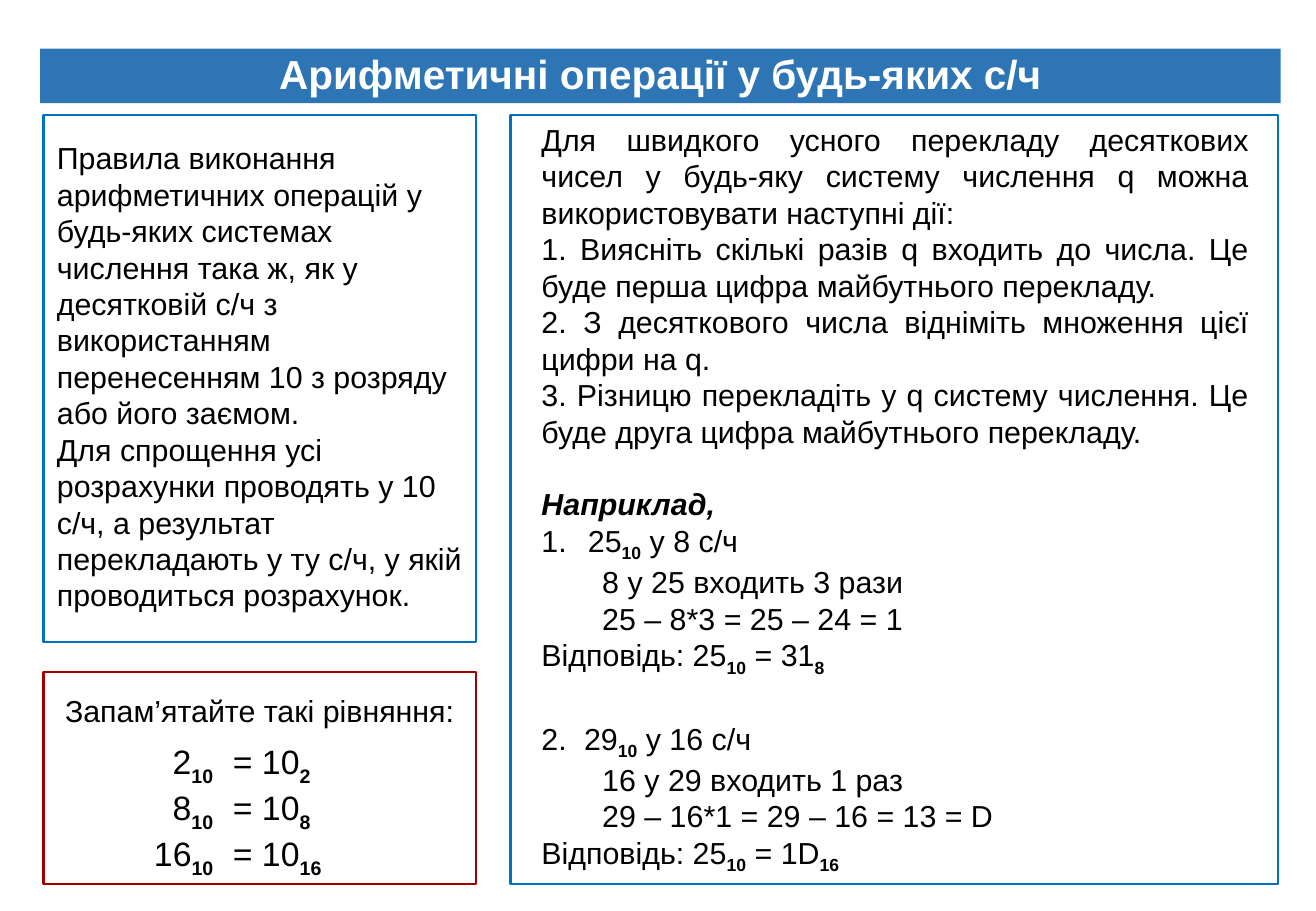
from lxml import etree
from pptx import Presentation
from pptx.dml.color import RGBColor
from pptx.enum.shapes import MSO_SHAPE
from pptx.enum.text import MSO_ANCHOR, MSO_AUTO_SIZE, PP_ALIGN
from pptx.oxml.ns import qn
from pptx.util import Cm, Pt

RECT = MSO_SHAPE.RECTANGLE
BOTTOM = MSO_ANCHOR.BOTTOM
GROW = MSO_AUTO_SIZE.SHAPE_TO_FIT_TEXT
LEFT, CENTER, JUSTIFY = PP_ALIGN.LEFT, PP_ALIGN.CENTER, PP_ALIGN.JUSTIFY
BLACK = RGBColor(0x00, 0x00, 0x00)
WHITE = RGBColor(0xFF, 0xFF, 0xFF)
BANNER = RGBColor(0x2E, 0x75, 0xB6)
BLUE = RGBColor(0x00, 0x70, 0xC0)
RED = RGBColor(0xA2, 0x00, 0x00)
FONT = "Arial"

TITLE = "Арифметичні операції у будь-яких с/ч"
RULES = [
    "Правила виконання арифметичних операцій у будь-яких системах числення "
    "така ж, як у десятковій с/ч з використанням перенесенням 10 з розряду "
    "або його заємом.",
    "Для спрощення усі розрахунки проводять у 10 с/ч, а результат "
    "перекладають у ту с/ч, у якій проводиться розрахунок.",
]
STEPS = [
    "Для швидкого усного перекладу десяткових чисел у будь-яку систему "
    "числення q можна використовувати наступні дії:",
    "1. Виясніть скількі разів q входить до числа. Це буде перша цифра "
    "майбутнього перекладу.",
    "2. З десяткового числа відніміть множення цієї цифри на q.",
    "3. Різницю перекладіть у q систему числення. Це буде друга цифра "
    "майбутнього перекладу.",
]
EXAMPLE_HEAD = "Наприклад,"
FIRST_EXAMPLE = [
    "25_10_ у 8 с/ч",
    "\t8 у 25 входить 3 рази",
    "\t25 – 8*3 = 25 – 24 = 1",
    "Відповідь: 25_10_ = 31_8_",
]
SECOND_EXAMPLE = [
    "2.\t29_10_ у 16 с/ч",
    "\t16 у 29 входить 1 раз",
    "\t29 – 16*1 = 29 – 16 = 13 = D",
    "Відповідь: 25_10_ = 1D_16_",
]
REMEMBER = "Запам’ятайте такі рівняння:"
EQUATIONS = ["\t2_10_\t= 10_2_", "\t8_10_\t= 10_8_", "16_10_\t= 10_16_"]

COL1, COL1_W = 0.91, 9.04
COL2, COL2_W = 10.67, 16.05
TOP, BASE = 2.41, 18.49
RULES_H, REMEMBER_TOP = 11.02, 14.05
FRAMES = [
    (COL1, TOP, COL1_W, RULES_H, BLUE),
    (COL2, TOP, COL2_W, BASE - TOP, BLUE),
    (COL1, REMEMBER_TOP, COL1_W, BASE - REMEMBER_TOP, RED),
]


def add_frame(s, x, y, w, h, color):
    sp = s.shapes.add_shape(RECT, Cm(x), Cm(y), Cm(w), Cm(h))
    sp.shadow.inherit = False
    sp.fill.background()
    sp.line.color.rgb = color
    sp.line.width = Pt(1.5)


def set_tabs(p, stops):
    tabs = etree.SubElement(p._p.get_or_add_pPr(), qn("a:tabLst"))
    for stop in stops:
        etree.SubElement(tabs, qn("a:tab"), pos=str(Cm(stop)), algn="l")


def number(p, indent):
    pPr = p._p.get_or_add_pPr()
    pPr.set("marL", str(Cm(indent)))
    pPr.set("indent", str(-Cm(indent)))
    etree.SubElement(pPr, qn("a:buFont"), typeface=FONT)
    etree.SubElement(pPr, qn("a:buAutoNum"), type="arabicPeriod")


def write(p, text, size, color=BLACK, bold=False):
    for i, part in enumerate(text.split("_")):
        if not part:
            continue
        r = p.add_run()
        r.text = part
        r.font.name = FONT
        r.font.size = Pt(size)
        r.font.color.rgb = color
        subscript = i % 2 == 1
        r.font.bold = bold or subscript
        if subscript:
            r._r.get_or_add_rPr().set("baseline", "-25000")


def add_text(s, x, y, w, h, lines, size=18, align=LEFT, stops=()):
    tf = s.shapes.add_textbox(Cm(x), Cm(y), Cm(w), Cm(h)).text_frame
    tf.word_wrap = True
    tf.auto_size = GROW
    for i, line in enumerate(lines):
        p = tf.add_paragraph() if i else tf.paragraphs[0]
        p.alignment = align
        if stops:
            set_tabs(p, stops)
        write(p, line, size)
    return tf


def add_title(s):
    sp = s.shapes.add_shape(RECT, Cm(0.84), Cm(1.02), Cm(25.93), Cm(1.14))
    sp.shadow.inherit = False
    sp.fill.solid()
    sp.fill.fore_color.rgb = BANNER
    sp.line.fill.background()
    tf = sp.text_frame
    tf.word_wrap = True
    tf.vertical_anchor = BOTTOM
    tf.margin_left = tf.margin_right = Cm(0.2)
    tf.margin_top = tf.margin_bottom = Cm(0.1)
    p = tf.paragraphs[0]
    p.alignment = CENTER
    p.line_spacing = 0.9
    write(p, TITLE, 24, WHITE, True)


def add_method(s):
    tf = add_text(s, 11.07, TOP, 15.29, 15.39, STEPS, align=JUSTIFY)
    head = tf.add_paragraph()
    write(head, EXAMPLE_HEAD, 18, bold=True)
    head.runs[0].font.italic = True
    head.space_before = Pt(21.6)
    for example, stops in ((FIRST_EXAMPLE, [1.27]), (SECOND_EXAMPLE, [0.89])):
        for i, line in enumerate(example):
            p = tf.add_paragraph()
            if i == 0 and example is FIRST_EXAMPLE:
                number(p, 0.97)
            elif "\t" in line:
                set_tabs(p, [1.27] if i else stops)
            if i == 0 and example is SECOND_EXAMPLE:
                p.space_before = Pt(24.9)
            write(p, line, 18)


def main():
    prs = Presentation()
    prs.slide_width, prs.slide_height = Cm(27.51), Cm(19.05)
    s = prs.slides.add_slide(prs.slide_layouts[6])
    add_title(s)
    for frame in FRAMES:
        add_frame(s, *frame)
    add_text(s, 0.94, 2.79, COL1_W, 10.26, RULES)
    add_method(s)
    add_text(s, COL1, 14.35, COL1_W, 1.02, [REMEMBER], align=CENTER)
    add_text(s, 2.97, 15.37, 5.16, 2.82, EQUATIONS, 20, stops=[0.39, 1.65])
    prs.save("out.pptx")


if __name__ == "__main__":
    main()
